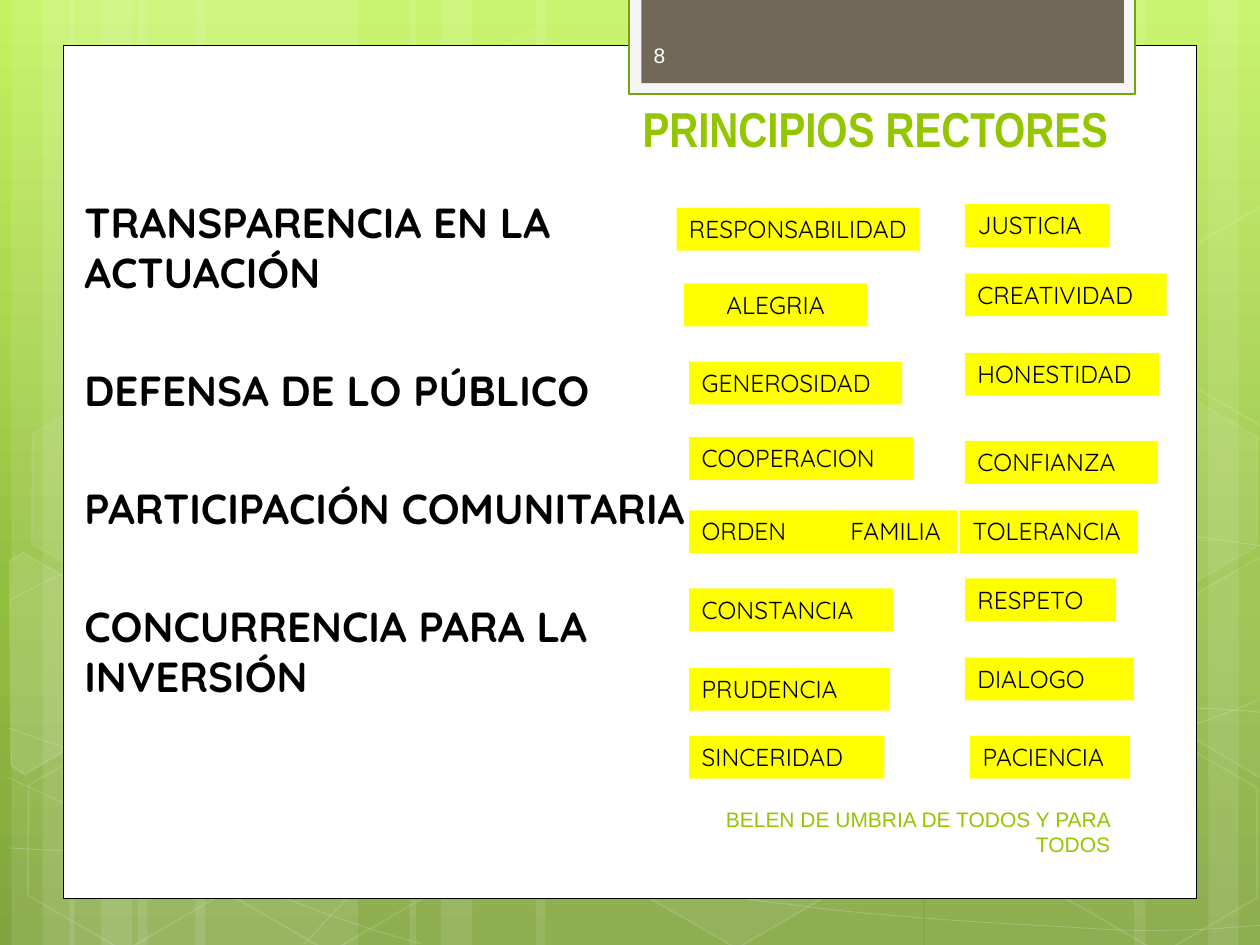
import copy
import math
import pptx
import pptx.dml.color
import pptx.enum.shapes
import pptx.enum.text
import pptx.oxml.ns
import pptx.util
import lxml.etree

PX = 9144  # 100 px to the inch
rgb = pptx.dml.color.RGBColor.from_string
qn = pptx.oxml.ns.qn
MSO = pptx.enum.shapes.MSO_SHAPE
ANCHOR = pptx.enum.text.MSO_ANCHOR
ALIGN = pptx.enum.text.PP_ALIGN
AUTO = pptx.enum.text.MSO_AUTO_SIZE


def paint(sp, fill=None, line=None, width=1, fill_alpha=100, line_alpha=100):
    sp.shadow.inherit = False
    if fill:
        sp.fill.solid()
        sp.fill.fore_color.rgb = rgb(fill)
    else:
        sp.fill.background()
    if line:
        sp.line.color.rgb = rgb(line)
        sp.line.width = pptx.util.Pt(width)
    else:
        sp.line.fill.background()
    for route, alpha in (("a:solidFill/a:srgbClr", fill_alpha),
                         ("a:ln/a:solidFill/a:srgbClr", line_alpha)):
        for clr in sp._element.spPr.xpath(route):
            if alpha < 100:
                lxml.etree.SubElement(clr, qn("a:alpha")).set("val", str(alpha * 1000))


def write(p, text, size, font, color, bold=False, align=ALIGN.LEFT):
    p.alignment = align
    r = p.add_run()
    r.text = text
    r.font.size = pptx.util.Pt(size)
    r.font.name = font
    r.font.bold = bold
    r.font.color.rgb = rgb(color)


prs = pptx.Presentation()
prs.slide_width, prs.slide_height = 1000 * PX, 750 * PX
slide = prs.slides.add_slide(prs.slide_layouts[1])
shapes = slide.shapes
title, body = slide.placeholders[0], slide.placeholders[1]

# Background gradient
bg = slide.background.fill
bg.gradient()
bg.gradient_angle = 270
stops = slide.element.find(".//" + qn("a:gsLst"))
stops.insert(1, copy.deepcopy(stops[0]))
for stop, (pos, color) in zip(bg.gradient_stops,
                              [(0, "C3F35F"), (0.62, "93BF3F"), (1, "81A53E")]):
    stop.position = pos
    stop.color.rgb = rgb(color)

# Pale vertical stripes: left, width
for x, w in [(109, 175), (9, 50), (34, 83), (155, 175), (55, 50), (80, 83),
             (734, 175), (959, 50), (900, 83), (425, 308), (325, 50), (350, 83)]:
    sp = shapes.add_shape(MSO.RECTANGLE, x * PX, 0, w * PX, 750 * PX)
    sp.rotation = 180 if x > 700 else 0
    paint(sp, "FFFFFF", fill_alpha=10)

# Thin waves: a start point, then three Bezier points per segment
waves = [
    [(7, 673), (61, 676), (115, 679), (190, 678), (265, 677), (358, 675), (458, 665),
     (558, 655), (700, 636), (792, 617), (883, 598), (977, 568), (1007, 551)],
    [(7, 477), (36, 461), (65, 446), (121, 431), (178, 416), (259, 394), (347, 387),
     (436, 380), (544, 379), (654, 387), (764, 395), (947, 426), (1007, 434)],
    [(6, 617), (127, 672), (247, 727), (335, 749)],
    [(7, 578), (38, 589), (70, 600), (128, 616), (186, 631), (273, 656), (357, 673),
     (440, 690), (545, 708), (628, 718), (711, 729), (800, 733), (853, 736),
     (906, 740), (919, 738), (945, 738), (971, 737), (989, 735), (1007, 734)],
    [(242, 749), (260, 729), (278, 709), (302, 691), (326, 672), (360, 653), (388, 639),
     (416, 625), (433, 619), (469, 609), (506, 599), (573, 585), (608, 578),
     (644, 571), (649, 571), (680, 569), (711, 566), (760, 563), (794, 562),
     (829, 561), (886, 562), (886, 562), (908, 562), (930, 562), (953, 562),
     (971, 563), (988, 564), (997, 565), (1006, 566), (1003, 565), (1006, 566)],
]
for wave in waves:
    fb = shapes.build_freeform(*wave[0], scale=PX)
    fb.add_line_segments(wave[1:], close=False)
    sp = fb.convert_to_shape()
    paint(sp, line="FFFFFF", width=0.5, line_alpha=20)
    outline = sp._element.spPr.find(".//" + qn("a:path"))
    corners = outline.findall(qn("a:lnTo"))
    for i in range(0, len(corners), 3):
        curve = lxml.etree.SubElement(outline, qn("a:cubicBezTo"))
        for corner in corners[i:i + 3]:
            curve.append(corner[0])
            outline.remove(corner)

# Hexagons: left, top, fill alpha, line alpha
for x, y, fill_alpha, line_alpha in [
        (334, 36, 4, 8), (497, 589, 6, 12), (11, 591, 0, 12), (14, 312, 7, 8),
        (174, 592, 0, 12), (753, 453, 10, 12), (834, 593, 0, 12), (834, 314, 7, 8)]:
    sp = shapes.add_shape(MSO.HEXAGON, x * PX, y * PX, 175 * PX, 152 * PX)
    sp.adjustments[0] = 0.285
    sp.rotation = 30
    paint(sp, "FFFFFF" if fill_alpha else None, "FFFFFF", 1, fill_alpha, line_alpha)

# Hexagons cut off by the slide edges, turned by 30 degrees about their centres
cos, sin = math.cos(math.radians(30)), math.sin(math.radians(30))
for fill_alpha, (cx, cy), pts in [
        (10, (36, 536), [(8, 445), (19, 438), (96, 483), (95, 570), (20, 614), (9, 607)]),
        (4, (985, 520), [(926, 485), (1002, 441), (1009, 446), (1009, 613), (1002, 617), (926, 573)]),
        (0, (985, 241), [(926, 207), (1002, 163), (1010, 168), (1009, 335), (1002, 339), (926, 295)])]:
    level = [(cx + (x - cx) * cos + (y - cy) * sin, cy - (x - cx) * sin + (y - cy) * cos)
             for x, y in pts]
    fb = shapes.build_freeform(*level[0], scale=PX)
    fb.add_line_segments(level[1:], close=True)
    sp = fb.convert_to_shape()
    sp.rotation = 30
    paint(sp, "FFFFFF" if fill_alpha else None, "FFFFFF", 1, fill_alpha, 12)

# White page and the tab at its top
for x, y, w, h, fill, line, width in [
        (50, 36, 900, 677, "FFFFFF", "000000", 0.5),
        (499, -2, 402, 77, "F5F5F5", "74A510", 1.25),
        (509, -2, 383, 68, "71685A", None, 0)]:
    sp = shapes.add_shape(MSO.RECTANGLE, x * PX, y * PX, w * PX, h * PX)
    paint(sp, fill, line, width)

# Title and list, brought in front of the page
for sp, (x, y, w, h), anchor in [(body, (20, 151, 551, 224), ANCHOR.TOP),
                                 (title, (500, 52, 496, 78), ANCHOR.BOTTOM)]:
    shapes._spTree.append(sp._element)
    sp.left, sp.top, sp.width, sp.height = x * PX, y * PX, w * PX, h * PX
    sp.text_frame.auto_size = AUTO.NONE
    sp.text_frame.word_wrap = True
    sp.text_frame.vertical_anchor = anchor
write(title.text_frame.paragraphs[0], "PRINCIPIOS RECTORES", 28, "Arial Narrow", "94C600", True)

tf = body.text_frame
for i, text in enumerate(["TRANSPARENCIA EN LA ACTUACIÓN", "DEFENSA DE LO PÚBLICO",
                          "PARTICIPACIÓN COMUNITARIA", "CONCURRENCIA PARA LA INVERSIÓN"]):
    p = tf.add_paragraph() if i else tf.paragraphs[0]
    write(p, text, 24, "Quicksand", "000000", True)
    p.space_before = pptx.util.Pt(38.5 if i else 0)
    pPr = p._p.get_or_add_pPr()
    pPr.set("marL", str(37 * PX))
    pPr.set("indent", "0")
    lxml.etree.SubElement(pPr, qn("a:buNone"))

# Footer and slide number
for text, (x, y, w, h), color, align in [
        ("BELEN DE UMBRIA DE TODOS Y PARA TODOS", (508, 640, 383, 40), "94C600", ALIGN.RIGHT),
        ("8", (509, 24, 146, 40), "FEFEFE", ALIGN.LEFT)]:
    tf = shapes.add_textbox(x * PX, y * PX, w * PX, h * PX).text_frame
    tf.word_wrap = True
    tf.vertical_anchor = ANCHOR.MIDDLE
    write(tf.paragraphs[0], text, 12, "Arial", color, align=align)

# Yellow value labels: text, left, top, width
tight = ("PACIENCIA", "TOLERANCIA", "RESPONSABILIDAD", "FAMILIA")
for text, x, y, w in [
        ("CONSTANCIA", 547, 467, 162), ("PACIENCIA", 770, 584, 127),
        ("PRUDENCIA", 547, 530, 159), ("TOLERANCIA", 762, 405, 141),
        ("ORDEN", 547, 405, 119), ("SINCERIDAD", 547, 584, 155),
        ("CONFIANZA", 766, 350, 153), ("DIALOGO", 766, 522, 134),
        ("CREATIVIDAD", 766, 217, 160), ("COOPERACION", 547, 347, 178),
        ("GENEROSIDAD", 547, 287, 169), ("RESPETO", 766, 459, 120),
        ("HONESTIDAD", 766, 280, 154), ("JUSTICIA", 766, 162, 115),
        ("ALEGRIA", 543, 225, 145), ("RESPONSABILIDAD", 537, 165, 193),
        ("FAMILIA", 665, 405, 95)]:
    sp = shapes.add_textbox(x * PX, y * PX, w * PX, 34 * PX)
    paint(sp, "FFFF00")
    tf = sp.text_frame
    tf.word_wrap = text not in tight
    tf.auto_size = AUTO.SHAPE_TO_FIT_TEXT
    write(tf.paragraphs[0], text, 14, "Quicksand", "000000",
          align=ALIGN.CENTER if text == "ALEGRIA" else ALIGN.LEFT)

prs.save("out.pptx")
